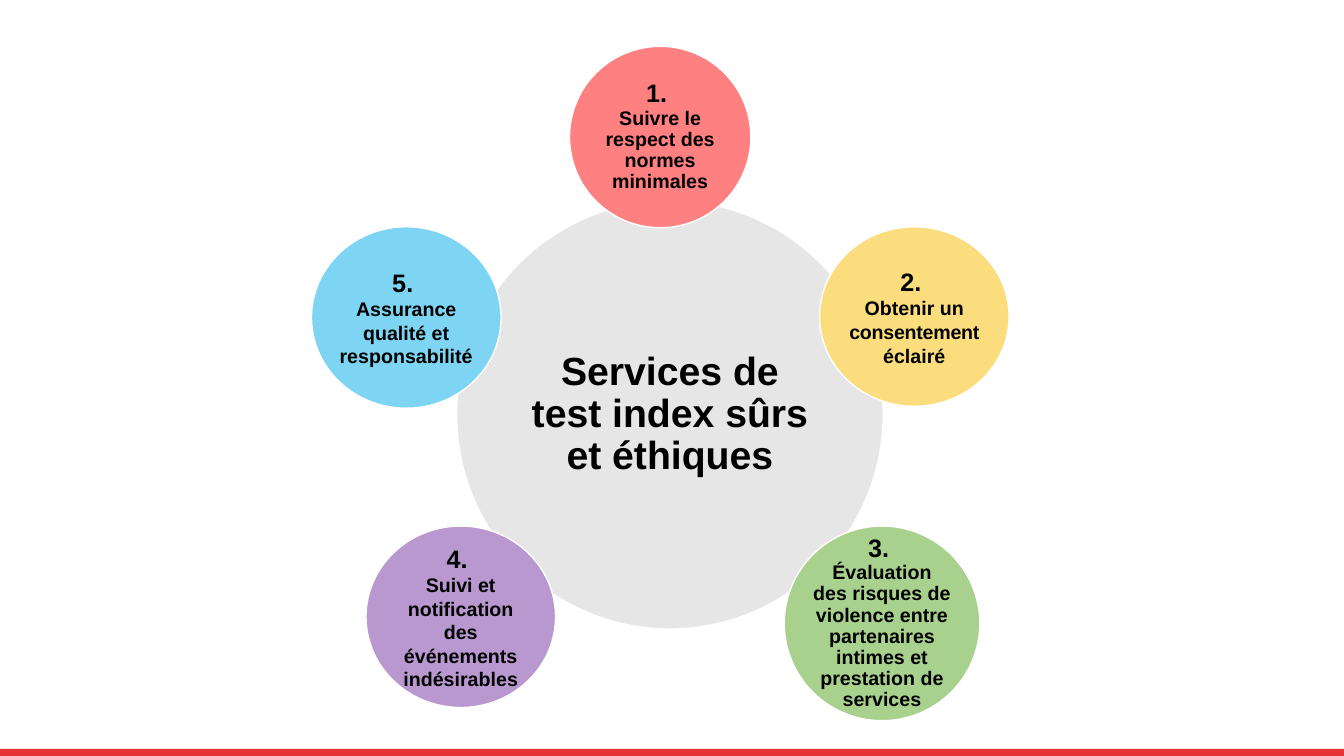
import pptx
import pptx.dml.color
import pptx.enum.shapes
import pptx.enum.text
import pptx.util

Pt = pptx.util.Pt
RGBColor = pptx.dml.color.RGBColor
SHAPE = pptx.enum.shapes.MSO_SHAPE

BLACK = RGBColor(0x00, 0x00, 0x00)
WHITE = RGBColor(0xFF, 0xFF, 0xFF)
RED = RGBColor(0xE7, 0x34, 0x39)
GREY = RGBColor(0xE7, 0xE6, 0xE6)
CORAL = RGBColor(0xFF, 0x80, 0x80)
GREEN = RGBColor(0xA9, 0xD1, 0x8E)
BLUE = RGBColor(0x7D, 0xD4, 0xF3)
PURPLE = RGBColor(0xB9, 0x98, 0xD0)
YELLOW = RGBColor(0xFC, 0xDD, 0x7D)

TIGHT_WORD = "consentement"  # letters drawn closer so the word fits its line

# number, label, left, top, width, height, fill, line spacing
STEPS = [
    ("1. ", "Suivre le respect des normes minimales",
     406.8, 33.1, 129.6, 129.6, CORAL, 0.9),
    ("3. ", "Évaluation des risques de violence entre partenaires intimes "
     "et prestation de services",
     560.2, 375.8, 139.7, 139, GREEN, 0.9),
    ("5. ", "Assurance qualité et responsabilité",
     222.5, 162, 135.4, 129.6, BLUE, 1.0),
    ("4. ", "Suivi et notification des événements indésirables",
     261.4, 375.8, 135.4, 129.6, PURPLE, 1.0),
    ("2. ", "Obtenir un consentement éclairé",
     585.4, 162, 135.4, 128.2, YELLOW, 1.0),
]

prs = pptx.Presentation()
prs.slide_width = Pt(960)
prs.slide_height = Pt(540)
s = prs.slides.add_slide(prs.slide_layouts[6])


def add_circle(left, top, width, height, fill, spacing):
    """Add a white-edged ellipse; return its text frame and centred paragraph."""
    sp = s.shapes.add_shape(SHAPE.OVAL, Pt(left), Pt(top), Pt(width), Pt(height))
    sp.shadow.inherit = False
    sp.fill.solid()
    sp.fill.fore_color.rgb = fill
    sp.line.color.rgb = WHITE
    sp.line.width = Pt(1)
    tf = sp.text_frame
    tf.word_wrap = True
    tf.vertical_anchor = pptx.enum.text.MSO_ANCHOR.MIDDLE
    p = tf.paragraphs[0]
    p.alignment = pptx.enum.text.PP_ALIGN.CENTER
    p.line_spacing = spacing
    p.font.name = "Arial"
    p.font.bold = True
    p.font.color.rgb = BLACK
    return tf, p


bar = s.shapes.add_shape(SHAPE.RECTANGLE, Pt(0), Pt(535), Pt(960), Pt(5))
bar.shadow.inherit = False
bar.fill.solid()
bar.fill.fore_color.rgb = RED
bar.line.fill.background()

tf, p = add_circle(326.2, 143.3, 304.6, 306, GREY, 0.9)
p.font.size = Pt(28)
p.add_run().text = "Services de test index sûrs et éthiques"

for number, label, left, top, width, height, fill, spacing in STEPS:
    tf, p = add_circle(left, top, width, height, fill, spacing)
    tf.margin_left = tf.margin_right = tf.margin_top = tf.margin_bottom = 0
    p.font.size = Pt(14)
    r = p.add_run()
    r.text = number
    r.font.size = Pt(18)
    p.add_line_break()
    for part in filter(None, label.partition(TIGHT_WORD)):
        r = p.add_run()
        r.text = part
        if part == TIGHT_WORD:
            r._r.get_or_add_rPr().set("spc", "-20")

prs.save("out.pptx")
